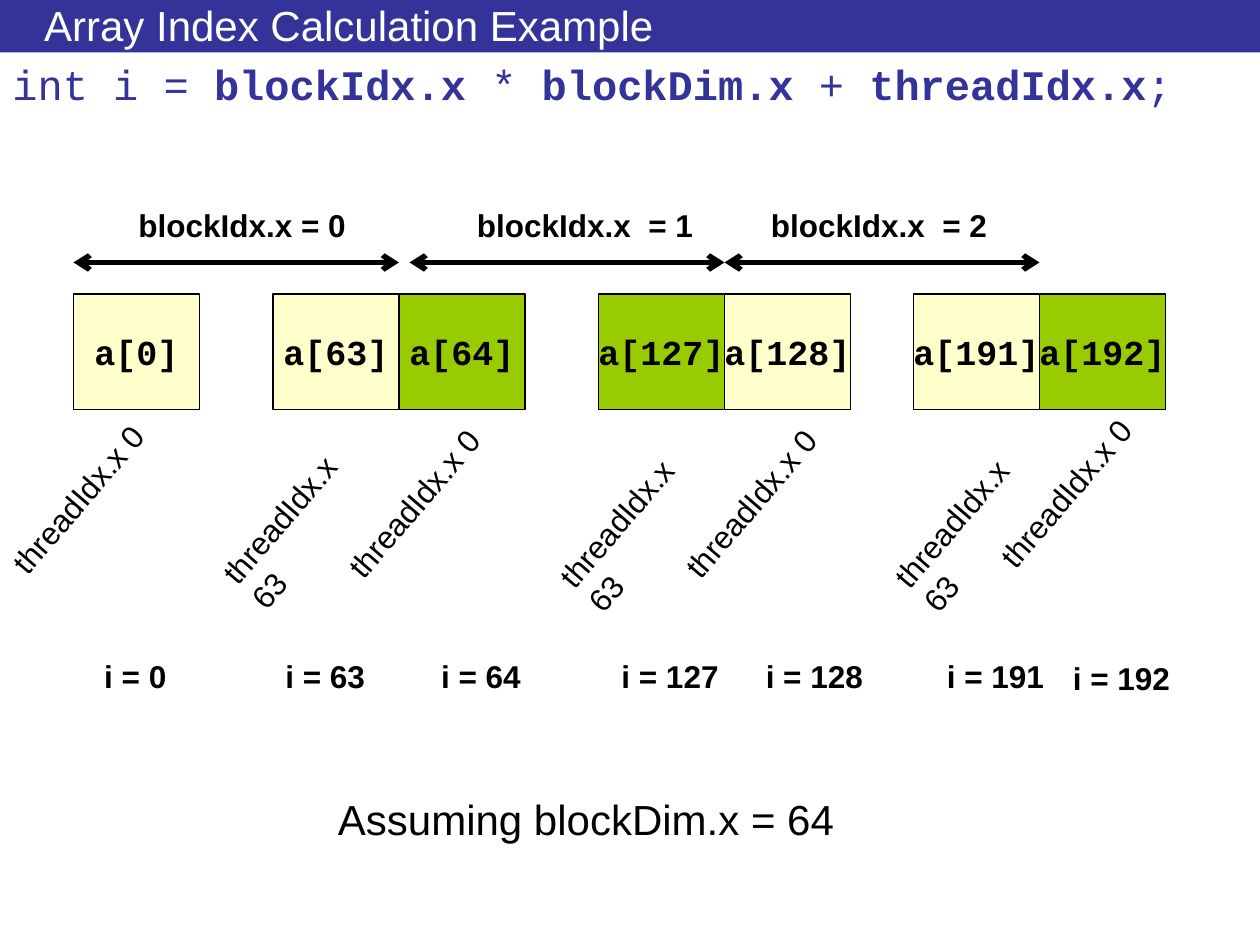
from pptx import Presentation
from pptx.dml.color import RGBColor
from pptx.enum.shapes import MSO_CONNECTOR, MSO_SHAPE
from pptx.enum.text import MSO_ANCHOR, MSO_AUTO_SIZE, PP_ALIGN
from pptx.oxml.ns import qn
from pptx.util import Pt
from lxml.etree import SubElement

BLUE, CREAM, GREEN, BLACK, WHITE = "333399", "FFFFCC", "99CC00", "000000", "FFFFFF"
BLOCK_DIM = 64
CELL_WIDTH, CELL_HEIGHT, CELL_TOP = 72, 66, 168

# index, cell left, thread label left and top, index label left and top
CELLS = [
    (0, 42, -15, 270.5, 52.5, 372),
    (63, 156, 103.5, 273, 156, 372),
    (64, 228, 177, 273, 245, 372),
    (127, 342, 296, 275, 348, 372),
    (128, 414, 369.5, 273, 430.5, 372),
    (191, 522, 487.5, 275, 534, 372),
    (192, 594, 549.5, 267, 606, 373),
]
# label, arrow start and end, label left and width
BLOCKS = [
    ("blockIdx.x = 0", 42, 228, 72, 134),
    ("blockIdx.x  = 1", 234, 414, 265.5, 139),
    ("blockIdx.x  = 2", 414, 594, 433.5, 139),
]
CODE = ["int i = ", "blockIdx.x", " * ", "blockDim.x", " + ", "threadIdx.x", ";"]


def color(value):
    return RGBColor.from_string(value)


class Painter:
    """Draws styled elements on one slide; all lengths are in points."""

    sans, mono = "Arial", "Courier New"

    def __init__(self, page):
        self.page = page

    def style(self, span, size, fill=BLACK, bold=False, font=sans):
        span.font.name = font
        span.font.size = Pt(size)
        span.font.bold = bold
        span.font.color.rgb = color(fill)

    def title(self, text, left, top, width, height):
        box = self.page.shapes.title
        box.left, box.top, box.width, box.height = map(Pt, (left, top, width, height))
        frame = box.text_frame
        frame.text = text
        frame.auto_size = MSO_AUTO_SIZE.NONE
        frame.vertical_anchor = MSO_ANCHOR.MIDDLE
        para = frame.paragraphs[0]
        para.alignment = PP_ALIGN.LEFT
        self.style(para.runs[0], 24, WHITE)

    def rectangle(self, left, top, width, height, fill):
        box = self.page.shapes.add_shape(
            MSO_SHAPE.RECTANGLE, Pt(left), Pt(top), Pt(width), Pt(height))
        box.shadow.inherit = False
        box.fill.solid()
        box.fill.fore_color.rgb = color(fill)
        box.line.fill.background()
        return box

    def title_bar(self, width, height):
        """Puts the bar behind the title."""
        bar = self.rectangle(0, 0, width, height, BLUE)
        self.page.shapes.title.element.addprevious(bar.element)

    def cell(self, text, left, fill):
        box = self.rectangle(left, CELL_TOP, CELL_WIDTH, CELL_HEIGHT, fill)
        box.line.color.rgb = color(BLACK)
        box.line.width = Pt(0.75)
        frame = box.text_frame
        frame.text = text
        frame.word_wrap = False
        frame.vertical_anchor = MSO_ANCHOR.MIDDLE
        para = frame.paragraphs[0]
        para.alignment = PP_ALIGN.CENTER
        self.style(para.runs[0], 20, bold=True, font=self.mono)

    def label(self, text, left, top, width, size=18, height=29, bold=False, rotation=0):
        box = self.page.shapes.add_textbox(Pt(left), Pt(top), Pt(width), Pt(height))
        box.rotation = rotation
        frame = box.text_frame
        frame.text = text
        frame.word_wrap = False
        frame.auto_size = MSO_AUTO_SIZE.SHAPE_TO_FIT_TEXT
        self.style(frame.paragraphs[0].runs[0], size, bold=bold)

    def code(self, parts, left, top, width, height):
        """Writes one line of code, with every second part in bold."""
        box = self.page.shapes.add_textbox(Pt(left), Pt(top), Pt(width), Pt(height))
        box.text_frame.word_wrap = True
        para = box.text_frame.paragraphs[0]
        para.space_before = Pt(4.8)
        for number, part in enumerate(parts):
            span = para.add_run()
            span.text = part
            self.style(span, 24, BLUE, number % 2 == 1, self.mono)

    def double_arrow(self, start, end, top):
        arrow = self.page.shapes.add_connector(
            MSO_CONNECTOR.STRAIGHT, Pt(start), Pt(top), Pt(end), Pt(top))
        arrow.line.color.rgb = color(BLACK)
        arrow.line.width = Pt(3)
        outline = arrow.line._get_or_add_ln()
        for tag in ("a:headEnd", "a:tailEnd"):
            SubElement(outline, qn(tag), type="arrow")
        SubElement(arrow.element.spPr, qn("a:effectLst"))


def main():
    deck = Presentation()
    deck.slide_width, deck.slide_height = Pt(720), Pt(540)
    painter = Painter(deck.slides.add_slide(deck.slide_layouts[5]))

    painter.title("Array Index Calculation Example", 18, 4, 666, 20)
    painter.title_bar(720, 30)
    painter.code(CODE, 0, 30, 720, 510)

    for index, left, *_ in CELLS:
        fill = GREEN if index // BLOCK_DIM % 2 else CREAM
        painter.cell(f"a[{index}]", left, fill)

    for text, start, end, left, width in BLOCKS:
        painter.double_arrow(start, end, 150)
        painter.label(text, left, 114, width, bold=True)

    for index, _, thread_left, thread_top, index_left, index_top in CELLS:
        thread = index % BLOCK_DIM
        painter.label(f"threadIdx.x {thread}", thread_left, thread_top,
                      128 if thread else 119, rotation=310.5)
        painter.label(f"i = {index}", index_left, index_top,
                      40 + 10 * len(str(index)), bold=True)

    painter.label("Assuming blockDim.x = 64", 186, 450, 298, size=24, height=36)
    deck.save("out.pptx")


if __name__ == "__main__":
    main()
